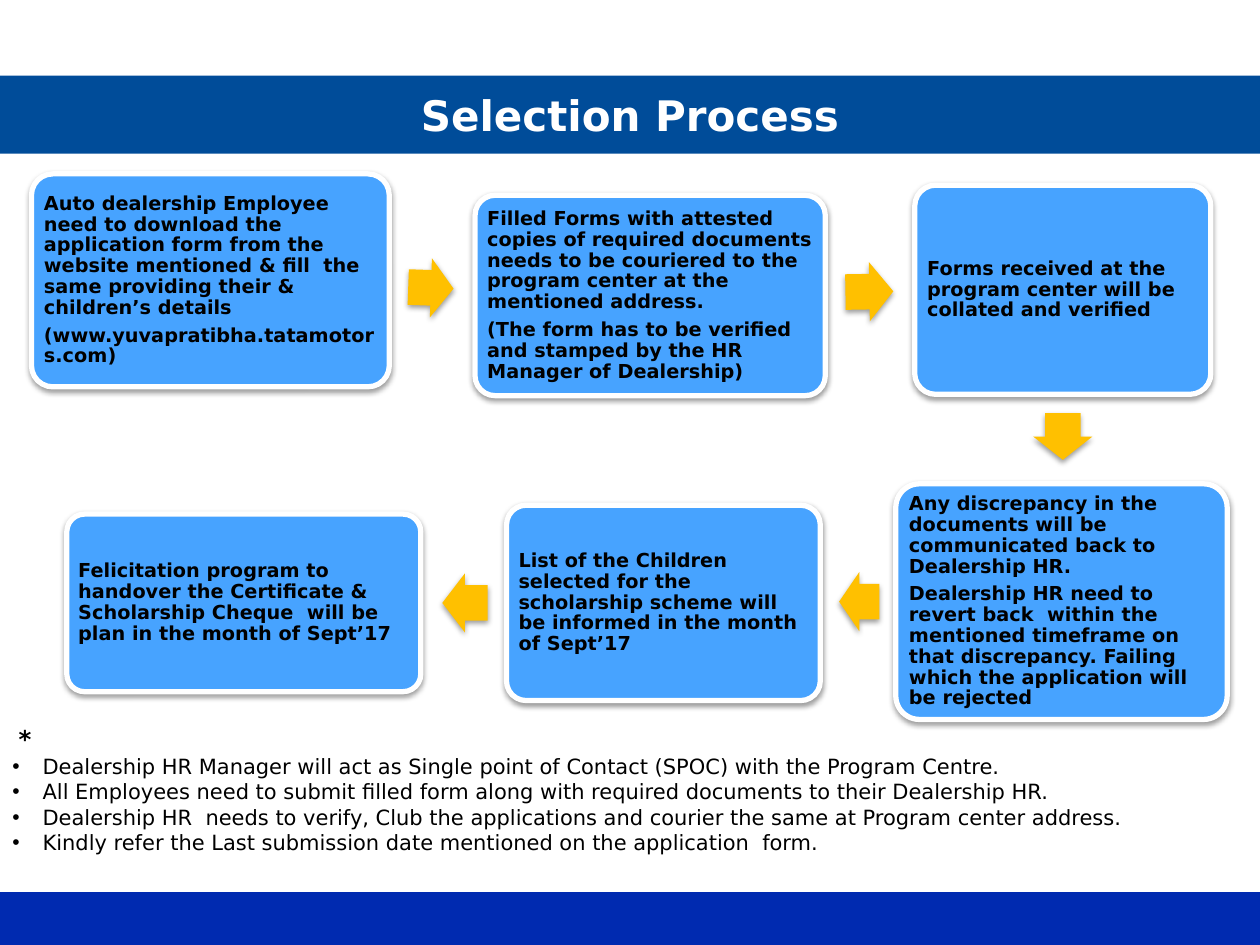
from lxml import etree
from pptx import Presentation
from pptx.dml.color import RGBColor
from pptx.enum.shapes import MSO_SHAPE
from pptx.enum.text import MSO_ANCHOR, PP_ALIGN
from pptx.oxml import parse_xml
from pptx.oxml.ns import qn
from pptx.util import Emu, Pt

RECT = MSO_SHAPE.RECTANGLE
ROUNDED = MSO_SHAPE.ROUNDED_RECTANGLE
ARROW = MSO_SHAPE.RIGHT_ARROW
MIDDLE = MSO_ANCHOR.MIDDLE
LEFT, CENTER = PP_ALIGN.LEFT, PP_ALIGN.CENTER

PX = 9144
FONT = "DejaVu Sans"
COLORS = {
    "band": "004C99", "footer": "002AB0", "step": "47A3FF",
    "arrow": "FFC000", "white": "FFFFFF", "text": "000000",
}
SHADOW = (
    '<a:outerShdw xmlns:a="http://schemas.openxmlformats.org/drawingml/2006/main" '
    'blurRad="40000" dist="20000" dir="5400000" rotWithShape="0">'
    '<a:srgbClr val="000000"><a:alpha val="38000"/></a:srgbClr></a:outerShdw>'
)

STEPS = [
    ((25, 138, 284, 169), [
        "Auto dealership Employee  need to download the application form from the "
        "website mentioned & fill  the same providing their &  children’s details",
        "(www.yuvapratibha.tatamotors.com)"]),
    ((377, 155, 278, 159), [
        "Filled Forms with attested copies of required documents needs to be "
        "couriered to the program center at the mentioned address.",
        "(The form has to be verified and stamped by the HR Manager of Dealership)"]),
    ((726, 147, 235, 166), [
        "Forms received at the program center will be collated and verified"]),
    ((711, 384, 263, 187), [
        "Any discrepancy in the documents will be communicated back to Dealership HR.",
        "Dealership HR need to revert back  within the mentioned timeframe on that "
        "discrepancy. Failing which the application will be rejected"]),
    ((402, 401, 249, 155), [
        "List of the Children selected for the scholarship scheme will be informed "
        "in the month of Sept’17"]),
    ((53, 408, 281, 141), [
        "Felicitation program to handover the Certificate & Scholarship Cheque  will "
        "be plan in the month of Sept’17"]),
]
ARROWS = [
    ((324, 205, 36, 47), 2), ((671, 208, 38, 47), -1), ((825, 323, 37, 47), 90),
    ((666, 454, 32, 47), 180), ((351, 455, 36, 47), 180),
]
NOTES = [
    "Dealership HR Manager will act as Single point of Contact (SPOC) with the Program Centre.",
    "All Employees need to submit filled form along with required documents to their Dealership HR.",
    "Dealership HR  needs to verify, Club the applications and courier the same at Program center address.",
    "Kindly refer the Last submission date mentioned on the application  form.",
]


class Deck:
    """Holds the style and the current slide, and draws each kind of element."""

    def __init__(self, width, height):
        self.prs = Presentation()
        self.prs.slide_width, self.prs.slide_height = Emu(width * PX), Emu(height * PX)
        self.s = self.prs.slides.add_slide(self.prs.slide_layouts[6])

    def box(self, box):
        return [Emu(v * PX) for v in box]

    def color(self, name):
        return RGBColor.from_string(COLORS[name])

    def shape(self, kind, box, fill, shadow=False):
        sp = self.s.shapes.add_shape(kind, *self.box(box))
        sp.fill.solid()
        sp.fill.fore_color.rgb = self.color(fill)
        sp.line.fill.background()
        sp.shadow.inherit = False
        if shadow:
            sp._element.spPr.find(qn("a:effectLst")).append(parse_xml(SHADOW))
        return sp

    def run(self, p, text, size, color="text", bold=True):
        r = p.add_run()
        r.text = text
        r.font.name, r.font.size, r.font.bold = FONT, Pt(size), bold
        r.font.color.rgb = self.color(color)

    def paragraph(self, tf, first, align=LEFT):
        p = tf.paragraphs[0] if first else tf.add_paragraph()
        p.alignment = align
        return p

    def title(self, box, text):
        tf = self.shape(RECT, box, "band").text_frame
        tf.vertical_anchor = MIDDLE
        self.run(self.paragraph(tf, True, CENTER), text, 24, "white")

    def step(self, box, texts):
        sp = self.shape(ROUNDED, box, "step", shadow=True)
        sp.adjustments[0] = 0.1
        sp.line.color.rgb = self.color("white")
        sp.line.width = Pt(3)
        tf = sp.text_frame
        tf.word_wrap = True
        tf.vertical_anchor = MIDDLE
        tf.margin_left = tf.margin_right = tf.margin_top = tf.margin_bottom = Emu(5 * PX)
        for i, text in enumerate(texts):
            p = self.paragraph(tf, i == 0)
            p.line_spacing = 0.9
            p.space_after = Pt(4)
            self.run(p, text, 11)

    def arrow(self, box, rotation):
        sp = self.shape(ARROW, box, "arrow", shadow=True)
        sp.adjustments[0], sp.adjustments[1] = 0.6, 0.5
        sp.rotation = rotation

    def notes(self, box, mark, items):
        tf = self.s.shapes.add_textbox(*self.box(box)).text_frame
        tf.word_wrap = True
        p = self.paragraph(tf, True)
        p._p.get_or_add_pPr().set("marL", str(5 * PX))
        self.run(p, mark, 14)
        for item in items:
            p = self.paragraph(tf, False)
            pPr = p._p.get_or_add_pPr()
            pPr.set("marL", str(24 * PX))
            pPr.set("indent", str(-24 * PX))
            etree.SubElement(pPr, qn("a:buFont")).set("typeface", "Arial")
            etree.SubElement(pPr, qn("a:buChar")).set("char", "•")
            self.run(p, item, 12, bold=False)


def main():
    deck = Deck(1000, 750)
    deck.shape(RECT, (0, 708, 1000, 42), "footer")
    deck.title((0, 60, 1000, 62), "Selection Process")
    for box, texts in STEPS:
        deck.step(box, texts)
    for box, rotation in ARROWS:
        deck.arrow(box, rotation)
    deck.notes((0, 570, 933, 114), "*", NOTES)
    deck.prs.save("out.pptx")


if __name__ == "__main__":
    main()
